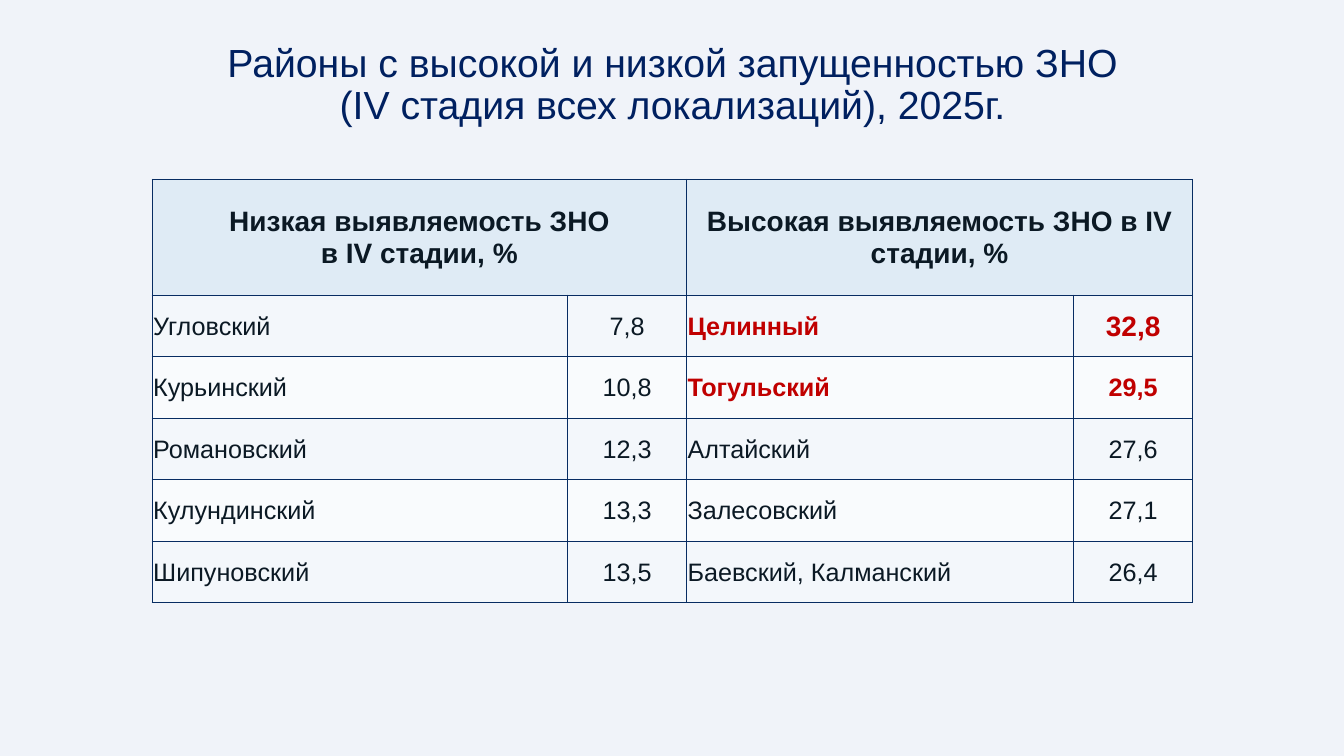
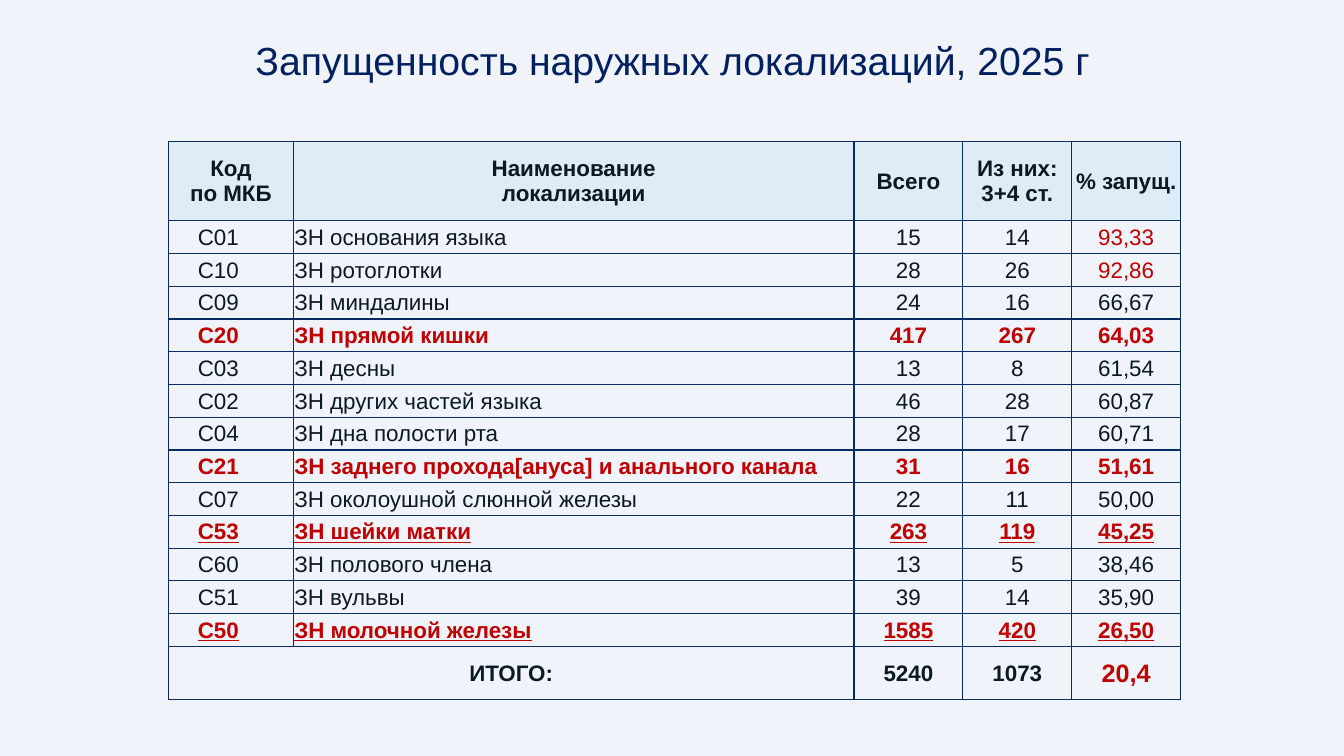
"""Build two slides with tables on late-stage cancer detection by district and by site."""
from lxml import etree
from pptx import Presentation
from pptx.dml.color import RGBColor
from pptx.enum.text import MSO_ANCHOR as ANCHOR, MSO_AUTO_SIZE as AUTO_SIZE, PP_ALIGN as ALIGN
from pptx.oxml.ns import qn
from pptx.util import Inches, Pt

FONT = "Arial"
COLORS = {
    "page": "F0F3F9", "title": "002060", "text": "0B1924", "alert": "C00000",
    "border": "072C62", "header": "DFEBF5", "odd": "F3F7FB", "even": "F9FBFD",
}
BOLD_ALERT = {"color": "alert", "bold": True}
UNDERLINED_ALERT = {**BOLD_ALERT, "underline": True}

DISTRICT_TITLE = "Районы с высокой и низкой запущенностью ЗНО\v(IV стадия всех локализаций), 2025г."
DISTRICT_HEADERS = [
    "Низкая выявляемость ЗНО\nв IV стадии, %",
    "Высокая выявляемость ЗНО в IV стадии, %",
]
DISTRICT_COLUMNS = [4.12, 1.18, 3.84, 1.18]
DISTRICTS = [
    ("Угловский", "7,8", "Целинный", "32,8"),
    ("Курьинский", "10,8", "Тогульский", "29,5"),
    ("Романовский", "12,3", "Алтайский", "27,6"),
    ("Кулундинский", "13,3", "Залесовский", "27,1"),
    ("Шипуновский", "13,5", "Баевский, Калманский", "26,4"),
]
ALERT_DISTRICTS = {"Целинный", "Тогульский"}

SITE_TITLE = "Запущенность наружных локализаций, 2025 г"
SITE_HEADERS = ["Код\nпо МКБ", "Наименование\nлокализации", "Всего", "Из них: 3+4 ст.", "% запущ."]
SITE_COLUMNS = [1.24, 5.56, 1.08, 1.08, 1.08]
SITES = [
    ("C01", "ЗН основания языка", "15", "14", "93,33"),
    ("C10", "ЗН ротоглотки", "28", "26", "92,86"),
    ("C09", "ЗН миндалины", "24", "16", "66,67"),
    ("C20", "ЗН прямой кишки", "417", "267", "64,03"),
    ("C03", "ЗН десны", "13", "8", "61,54"),
    ("C02", "ЗН других частей языка", "46", "28", "60,87"),
    ("C04", "ЗН дна полости рта", "28", "17", "60,71"),
    ("C21", "ЗН заднего прохода[ануса] и анального канала", "31", "16", "51,61"),
    ("C07", "ЗН околоушной слюнной железы", "22", "11", "50,00"),
    ("C53", "ЗН шейки матки", "263", "119", "45,25"),
    ("C60", "ЗН полового члена", "13", "5", "38,46"),
    ("C51", "ЗН вульвы", "39", "14", "35,90"),
    ("C50", "ЗН молочной железы", "1585", "420", "26,50"),
]
SITE_FORMATS = {
    "C20": BOLD_ALERT, "C21": BOLD_ALERT,
    "C53": UNDERLINED_ALERT, "C50": UNDERLINED_ALERT,
}
ALERT_SHARES = {"93,33", "92,86"}
TOTALS = ["5240", "1073", "20,4"]


def rgb(name):
    """Return the named colour."""
    return RGBColor.from_string(COLORS[name])


def write(frame, text, size=18, color="text", bold=False, underline=False, align=ALIGN.CENTER):
    """Fill a text frame, one paragraph a line, in one format."""
    frame.text = text
    for para in frame.paragraphs:
        para.alignment = align
        for span in para.runs:
            font = span.font
            font.name, font.size = FONT, Pt(size)
            font.bold, font.underline = bold, underline
            font.color.rgb = rgb(color)


def add_page(deck, title, left, top, width, height):
    """Add a title-only slide and place its title."""
    page = deck.slides.add_slide(deck.slide_layouts[5])
    box = page.shapes.title
    box.left, box.top, box.width, box.height = map(Inches, (left, top, width, height))
    frame = box.text_frame
    frame.word_wrap = True
    frame.auto_size = AUTO_SIZE.NONE
    frame.vertical_anchor = ANCHOR.TOP
    write(frame, title, size=28, color="title")
    frame.paragraphs[0].line_spacing = 0.9
    return page


def add_grid(page, left, top, columns, rows):
    """Add a plain bordered table with the given column widths and row heights."""
    table = page.shapes.add_table(
        len(rows), len(columns), Inches(left), Inches(top), Inches(sum(columns)), Inches(sum(rows))
    ).table
    table.first_row = table.horz_banding = False
    for column, width in zip(table.columns, columns):
        column.width = Inches(width)
    for row, height in zip(table.rows, rows):
        row.height = Inches(height)
    for cell in table.iter_cells():
        properties = cell._tc.get_or_add_tcPr()
        for side in ("a:lnL", "a:lnR", "a:lnT", "a:lnB"):
            line = etree.SubElement(properties, qn(side), w=str(Pt(1)))
            fill = etree.SubElement(line, qn("a:solidFill"))
            etree.SubElement(fill, qn("a:srgbClr"), val=COLORS["border"])
        cell.fill.background()
    return table


def set_cell(cell, text, fill=None, inset=0.01, right=None, **style):
    """Write one table cell, with an optional fill and right inset."""
    cell.vertical_anchor = ANCHOR.MIDDLE
    cell.margin_left = Inches(inset)
    cell.margin_right = Inches(inset if right is None else right)
    cell.margin_top, cell.margin_bottom = Inches(0.01), 0
    if fill:
        cell.fill.solid()
        cell.fill.fore_color.rgb = rgb(fill)
    write(cell.text_frame, text, **style)


def add_districts(deck):
    """Add the slide that compares districts."""
    page = add_page(deck, DISTRICT_TITLE, 0.37, 0.38, 12.6, 1.03)
    table = add_grid(page, 1.51, 1.78, DISTRICT_COLUMNS, [1.15] + [0.61] * len(DISTRICTS))
    for half, header in enumerate(DISTRICT_HEADERS):
        cell = table.cell(0, 2 * half)
        cell.merge(table.cell(0, 2 * half + 1))
        set_cell(cell, header, fill="header", inset=0.04, size=20, bold=True)
    for row, values in enumerate(DISTRICTS, 1):
        for column, value in enumerate(values):
            name = values[column // 2 * 2]
            style = BOLD_ALERT if name in ALERT_DISTRICTS else {}
            set_cell(
                table.cell(row, column), value, fill="odd" if row % 2 else "even",
                size=20 if value == "32,8" else 18,
                align=ALIGN.CENTER if column % 2 else ALIGN.LEFT, **style,
            )


def add_sites(deck):
    """Add the slide that lists external sites."""
    page = add_page(deck, SITE_TITLE, 1.67, 0.36, 10, 0.44)
    heights = [0.79] + [0.325] * len(SITES) + [0.53]
    table = add_grid(page, 1.67, 1.4, SITE_COLUMNS, heights)
    for column, header in enumerate(SITE_HEADERS):
        set_cell(table.cell(0, column), header, fill="header", size=16, bold=True)
    for row, values in enumerate(SITES, 1):
        for column, value in enumerate(values):
            style = {"color": "alert"} if value in ALERT_SHARES else SITE_FORMATS.get(values[0], {})
            set_cell(
                table.cell(row, column), value, size=16, right=0.26 if column == 0 else None,
                align=ALIGN.LEFT if column == 1 else ALIGN.CENTER, **style,
            )
    last = len(heights) - 1
    table.cell(last, 0).merge(table.cell(last, 1))
    set_cell(table.cell(last, 0), "ИТОГО:", size=16, bold=True)
    for column, total in enumerate(TOTALS, 2):
        style = {"size": 18, "color": "alert"} if column == 4 else {"size": 16}
        set_cell(table.cell(last, column), total, bold=True, **style)


def main():
    """Build and save the deck."""
    deck = Presentation()
    deck.slide_width, deck.slide_height = Inches(13.33), Inches(7.5)
    master = deck.slide_master
    master.background.fill.solid()
    master.background.fill.fore_color.rgb = rgb("page")
    title_style = master.element.find(".//" + qn("p:titleStyle"))
    title_style.find(".//" + qn("a:defRPr")).set("sz", "2800")
    add_districts(deck)
    add_sites(deck)
    deck.save("out.pptx")


if __name__ == "__main__":
    main()
